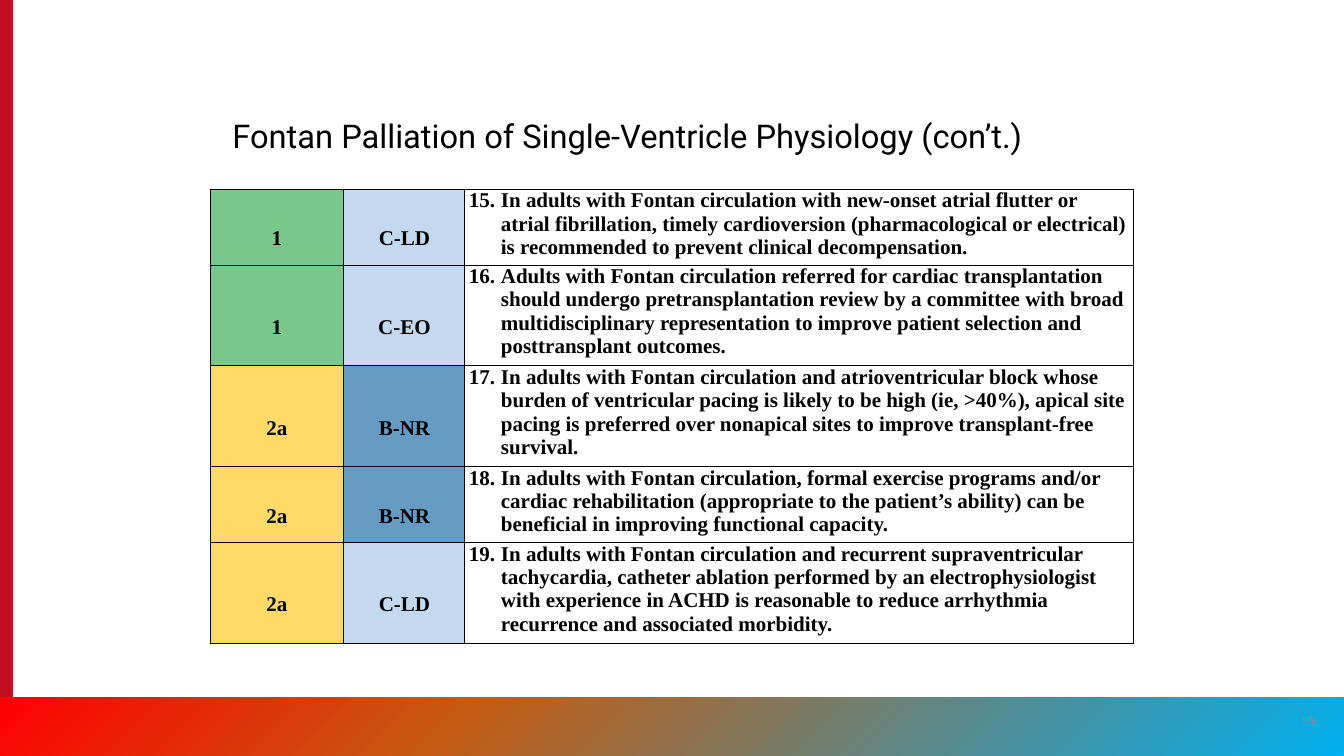
from copy import deepcopy

from lxml.etree import SubElement
from pptx import Presentation
from pptx.dml.color import RGBColor
from pptx.enum.shapes import MSO_SHAPE as SHAPE
from pptx.enum.text import MSO_ANCHOR as ANCHOR, MSO_AUTO_SIZE as FIT, PP_ALIGN as ALIGN
from pptx.oxml.ns import qn
from pptx.util import Emu, Pt

BLACK = RGBColor(0x00, 0x00, 0x00)
GRAY = RGBColor(0x8A, 0x8B, 0x8A)
CRIMSON = RGBColor(0xC1, 0x0E, 0x21)
RED = RGBColor(0xFF, 0x00, 0x00)
ORANGE = RGBColor(0xC5, 0x5A, 0x11)
CYAN = RGBColor(0x00, 0xB0, 0xF0)
GREEN = RGBColor(0x79, 0xC7, 0x8D)
YELLOW = RGBColor(0xFF, 0xDA, 0x68)
PALE_BLUE = RGBColor(0xC4, 0xD9, 0xF0)
STEEL_BLUE = RGBColor(0x65, 0x9B, 0xC2)

CLASS_FILLS = {"1": GREEN, "2a": YELLOW}
LEVEL_FILLS = {"C-LD": PALE_BLUE, "C-EO": PALE_BLUE, "B-NR": STEEL_BLUE}
FIRST_NUMBER = 15
COLUMNS = (134, 121, 669)
ROWS = (
    (76, "1", "C-LD", "In adults with Fontan circulation with new-onset atrial flutter or atrial "
     "fibrillation, timely cardioversion (pharmacological or electrical) is recommended to "
     "prevent clinical decompensation."),
    (83, "1", "C-EO", "Adults with Fontan circulation referred for cardiac transplantation should "
     "undergo pretransplantation review by a committee with broad multidisciplinary "
     "representation to improve patient selection and posttransplant outcomes."),
    (76, "2a", "B-NR", "In adults with Fontan circulation and atrioventricular block whose burden "
     "of ventricular pacing is likely to be high (ie, >40%), apical site pacing is preferred "
     "over nonapical sites to improve transplant-free survival."),
    (76, "2a", "B-NR", "In adults with Fontan circulation, formal exercise programs and/or cardiac "
     "rehabilitation (appropriate to the patient’s ability) can be beneficial in improving "
     "functional capacity."),
    (96, "2a", "C-LD", "In adults with Fontan circulation and recurrent supraventricular "
     "tachycardia, catheter ablation performed by an electrophysiologist with experience in "
     "ACHD is reasonable to reduce arrhythmia recurrence and associated morbidity."),
)


def px(n):
    return Emu(round(n * 914400 / 84))


class Deck:
    """Holds the style and the current slide."""

    heading_font = "Roboto"
    table_font = "Times New Roman"

    def __init__(self, width, height):
        self.prs = Presentation()
        self.prs.slide_width, self.prs.slide_height = px(width), px(height)
        self.slide = self.prs.slides.add_slide(self.prs.slide_layouts[5])

    def font(self, p, name, size, color, bold=False):
        f = p.font
        f.name, f.size, f.bold = name, Pt(size), bold
        f.color.rgb = color

    def bar(self, *box):
        sp = self.slide.shapes.add_shape(SHAPE.RECTANGLE, *map(px, box))
        sp.shadow.inherit = False
        sp.line.fill.background()
        return sp

    def solid_bar(self, box, color):
        fill = self.bar(*box).fill
        fill.solid()
        fill.fore_color.rgb = color

    def gradient_bar(self, box, stops):
        sp = self.bar(*box)
        sp.rotation = 180
        sp.fill.gradient()
        sp.fill.gradient_angle = 315
        gs_list = next(sp._element.iter(qn("a:gsLst")))
        gs_list.insert(1, deepcopy(gs_list[0]))
        for stop, (position, color) in zip(sp.fill.gradient_stops, stops):
            stop.position = position
            stop.color.rgb = color

    def title(self, text, box):
        sp = self.slide.shapes.title
        sp.left, sp.top, sp.width, sp.height = map(px, box)
        tf = sp.text_frame
        tf.text = text
        tf.word_wrap = True
        tf.auto_size = FIT.SHAPE_TO_FIT_TEXT
        tf.vertical_anchor = ANCHOR.TOP
        p = tf.paragraphs[0]
        p.alignment = ALIGN.LEFT
        self.font(p, self.heading_font, 28, BLACK)

    def page_number(self, text, box):
        tf = self.slide.shapes.add_textbox(*map(px, box)).text_frame
        tf.word_wrap = True
        tf.vertical_anchor = ANCHOR.MIDDLE
        tf.margin_left = tf.margin_right = 0
        p = tf.paragraphs[0]
        p.text = text
        p.alignment = ALIGN.CENTER
        self.font(p, self.heading_font, 8, GRAY)

    def cell(self, cell, text, color=None, number=None):
        cell.margin_left = cell.margin_right = px(4)
        cell.margin_top = cell.margin_bottom = 0
        tc_pr = cell._tc.get_or_add_tcPr()
        for side in ("lnL", "lnR", "lnT", "lnB"):
            ln = SubElement(tc_pr, qn(f"a:{side}"), w=str(Pt(1)))
            SubElement(SubElement(ln, qn("a:solidFill")), qn("a:srgbClr"), val=str(BLACK))
        if color is None:
            cell.fill.background()
        else:
            cell.fill.solid()
            cell.fill.fore_color.rgb = color
        p = cell.text_frame.paragraphs[0]
        p.text = text
        if number is None:
            cell.vertical_anchor = ANCHOR.MIDDLE
            p.alignment = ALIGN.CENTER
            p.line_spacing = 2.0
        else:
            cell.vertical_anchor = ANCHOR.TOP
            p_pr = p._p.get_or_add_pPr()
            p_pr.set("marL", str(px(32)))
            p_pr.set("indent", str(-px(32)))
            SubElement(p_pr, qn("a:buAutoNum"), type="arabicPeriod", startAt=str(number))
        p.space_after = Pt(8)
        self.font(p, self.table_font, 18, BLACK, bold=True)

    def recommendations(self, left, top):
        size = sum(COLUMNS), sum(row[0] for row in ROWS)
        frame = self.slide.shapes.add_table(
            len(ROWS), len(COLUMNS), px(left), px(top), *map(px, size))
        table = frame.table
        table.first_row = table.horz_banding = False
        for column, width in zip(table.columns, COLUMNS):
            column.width = px(width)
        for i, (height, grade, level, advice) in enumerate(ROWS):
            table.rows[i].height = px(height)
            self.cell(table.cell(i, 0), grade, CLASS_FILLS[grade])
            self.cell(table.cell(i, 1), level, LEVEL_FILLS[level])
            self.cell(table.cell(i, 2), advice, number=FIRST_NUMBER + i)


def main():
    deck = Deck(1344, 756)
    deck.solid_bar((0, 0, 13, 756), CRIMSON)
    deck.gradient_bar((0, 697, 1344, 59), ((0, CYAN), (0.66, ORANGE), (1, RED)))
    deck.page_number("176", (1289, 701, 40, 40))
    deck.title("Fontan Palliation of Single-Ventricle Physiology (con’t.)", (224, 112, 896, 48))
    deck.recommendations(210, 189)
    deck.prs.save("out.pptx")


if __name__ == "__main__":
    main()
